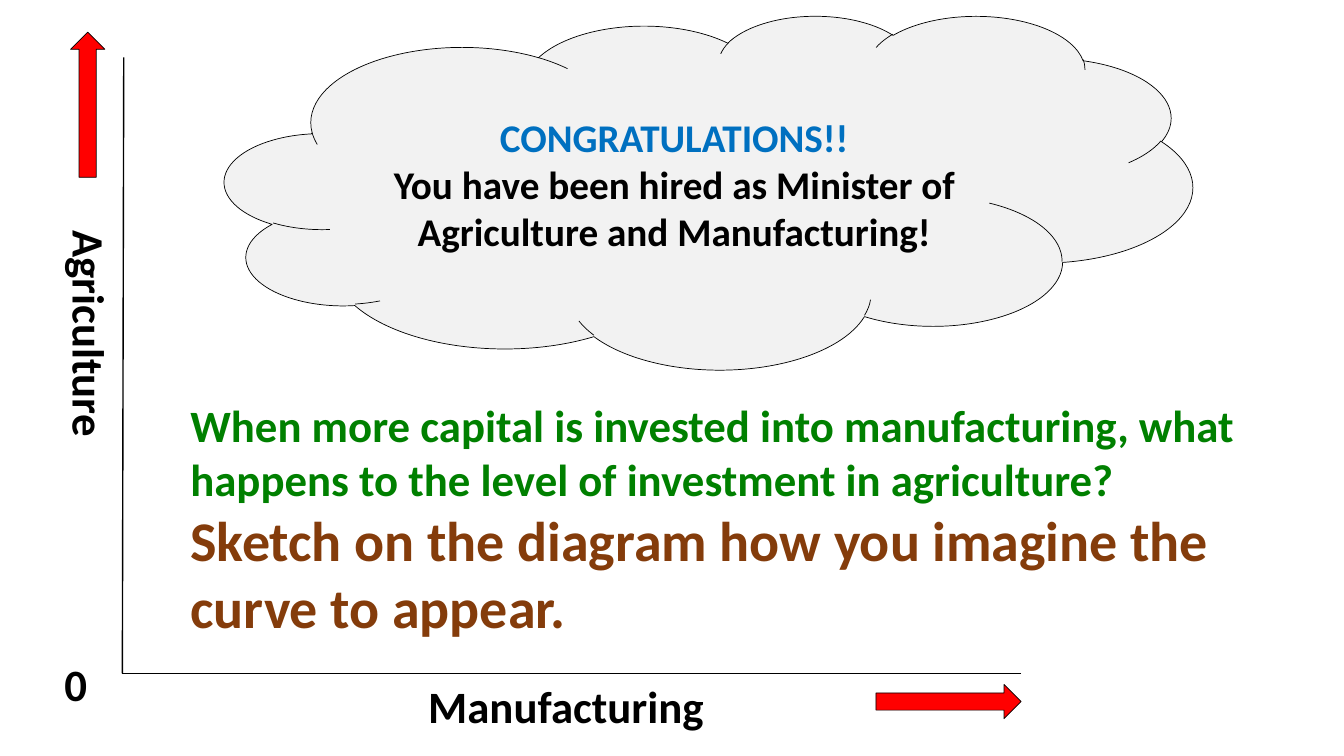
from dataclasses import dataclass

import pptx
import pptx.dml.color
import pptx.enum.shapes
import pptx.enum.text
import pptx.oxml.ns
import pptx.util
from lxml import etree

Pt = pptx.util.Pt
RGB = pptx.dml.color.RGBColor
SHAPE = pptx.enum.shapes.MSO_SHAPE


@dataclass(frozen=True)
class Theme:
    font: str = "Calibri"
    black: str = "000000"
    red: str = "FF0000"
    green: str = "008000"
    brown: str = "843C0B"
    blue: str = "0070C0"
    cloud: str = "F2F2F2"
    cloud_size: float = 28
    body_size: float = 32
    task_size: float = 40
    axis_width: float = 1
    outline_width: float = 0.5


@dataclass(frozen=True)
class Box:
    left: float
    top: float
    width: float
    height: float
    rotation: float = 0


@dataclass(frozen=True)
class Label:
    text: str
    box: Box


@dataclass(frozen=True)
class Axis:
    x1: float
    y1: float
    x2: float
    y2: float


THEME = Theme()

AXES = [
    Axis(88.4, 41, 87.4, 481),
    Axis(729.4, 481, 87.4, 481),
]
LABELS = [
    Label("0", Box(38.9, 465.8, 41.8, 46)),
    Label("Agriculture", Box(-59.8, 258.5, 248.4, 46, 90)),
    Label("Manufacturing", Box(298.8, 481, 248.4, 46)),
]
ARROWS = [
    Box(50.4, 23, 24.5, 103.7),
    Box(665.3, 449.3, 24.5, 103.7, 90),
]
QUESTION = Box(128.9, 280.8, 771.1, 181.4)
CLOUD = Box(160.6, 10.8, 691.2, 252.7)


def place(box: Box) -> tuple:
    return Pt(box.left), Pt(box.top), Pt(box.width), Pt(box.height)


def add_run(p, text: str, *, size: float = THEME.body_size, color: str = THEME.black) -> None:
    r = p.add_run()
    r.text = text
    r.font.name = THEME.font
    r.font.size = Pt(size)
    r.font.bold = True
    r.font.color.rgb = RGB.from_string(color)


def add_axis(s, axis: Axis) -> None:
    line = s.shapes.add_connector(
        pptx.enum.shapes.MSO_CONNECTOR.STRAIGHT,
        Pt(axis.x1), Pt(axis.y1), Pt(axis.x2), Pt(axis.y2))
    line.line.color.rgb = RGB.from_string(THEME.black)
    line.line.width = Pt(THEME.axis_width)
    etree.SubElement(line._element.spPr, pptx.oxml.ns.qn("a:effectLst"))


def add_text_box(s, box: Box):
    """Add a wrapping text box and return its first paragraph."""
    sp = s.shapes.add_textbox(*place(box))
    sp.rotation = box.rotation
    sp.text_frame.word_wrap = True
    return sp.text_frame.paragraphs[0]


def add_outlined(s, kind, box: Box, fill: str):
    sp = s.shapes.add_shape(kind, *place(box))
    sp.rotation = box.rotation
    sp.shadow.inherit = False
    sp.fill.solid()
    sp.fill.fore_color.rgb = RGB.from_string(fill)
    sp.line.color.rgb = RGB.from_string(THEME.black)
    sp.line.width = Pt(THEME.outline_width)
    return sp


def add_cloud(s) -> None:
    tf = add_outlined(s, SHAPE.CLOUD, CLOUD, THEME.cloud).text_frame
    tf.word_wrap = True
    tf.vertical_anchor = pptx.enum.text.MSO_ANCHOR.MIDDLE
    heading, message = tf.paragraphs[0], tf.add_paragraph()
    add_run(heading, "CONGRATULATIONS!!", size=THEME.cloud_size, color=THEME.blue)
    add_run(message, "You have been hired as Minister of Agriculture and Manufacturing!",
            size=THEME.cloud_size)
    for p in tf.paragraphs:
        p.alignment = pptx.enum.text.PP_ALIGN.CENTER


def main() -> None:
    prs = pptx.Presentation()
    prs.slide_width, prs.slide_height = Pt(960), Pt(540)
    s = prs.slides.add_slide(prs.slide_layouts[6])

    for axis in AXES:
        add_axis(s, axis)
    for label in LABELS:
        add_run(add_text_box(s, label.box), label.text)
    for box in ARROWS:
        add_outlined(s, SHAPE.UP_ARROW, box, THEME.red)

    p = add_text_box(s, QUESTION)
    add_run(p, "When more capital is invested into manufacturing, what happens "
               "to the level of investment in agriculture? ", color=THEME.green)
    add_run(p, "Sketch on the diagram how you imagine the curve to appear.",
            size=THEME.task_size, color=THEME.brown)
    add_cloud(s)

    prs.save("out.pptx")


if __name__ == "__main__":
    main()
